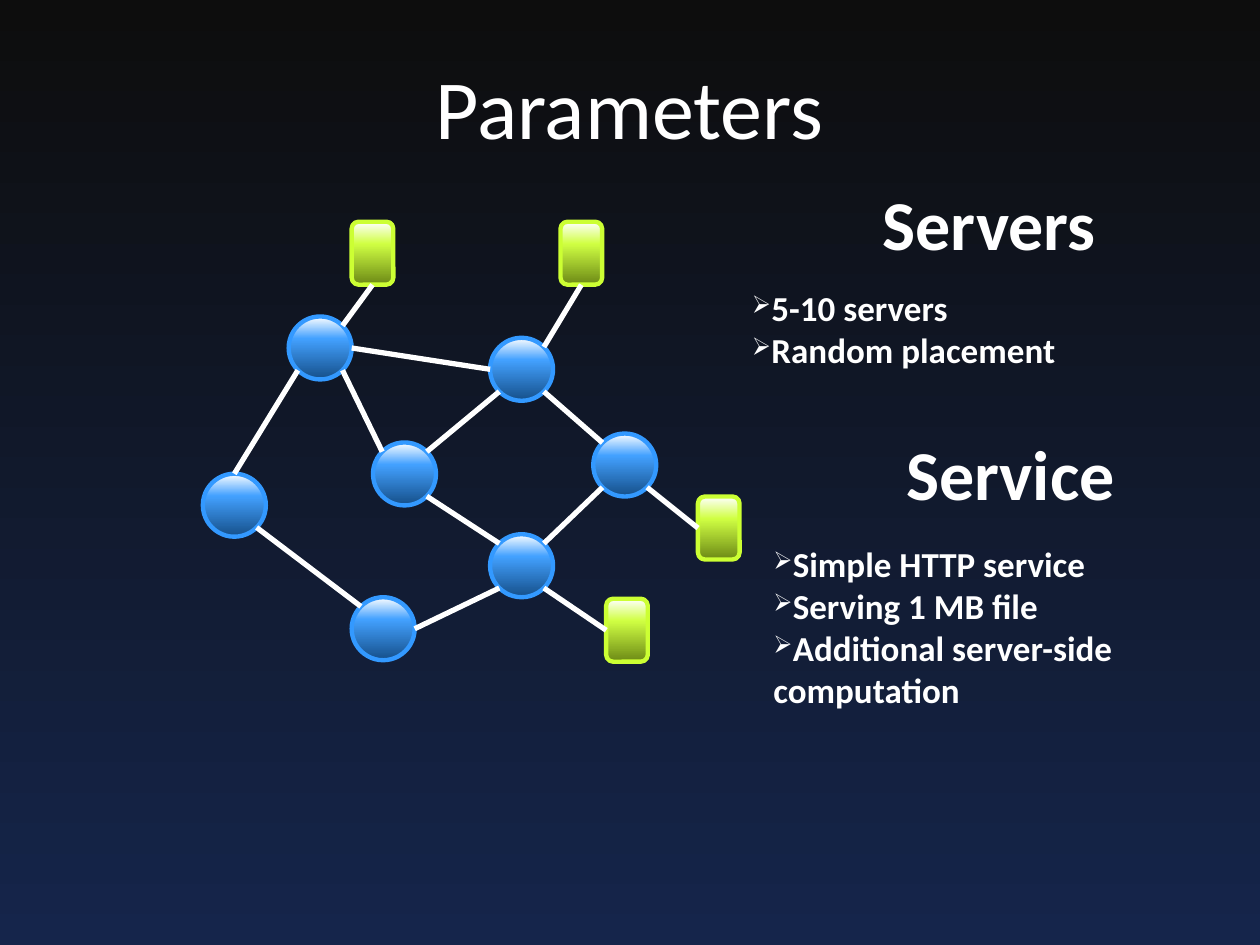
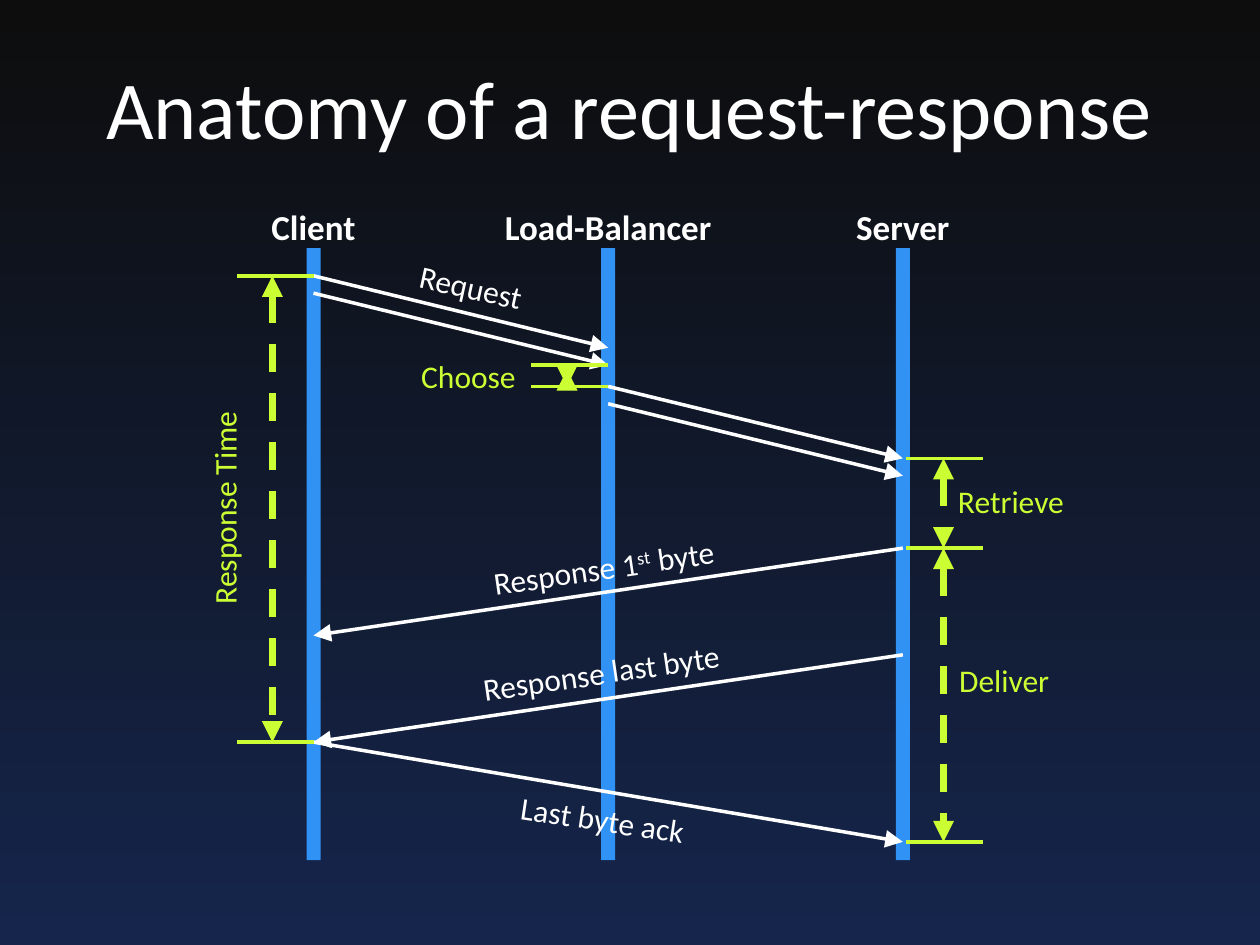
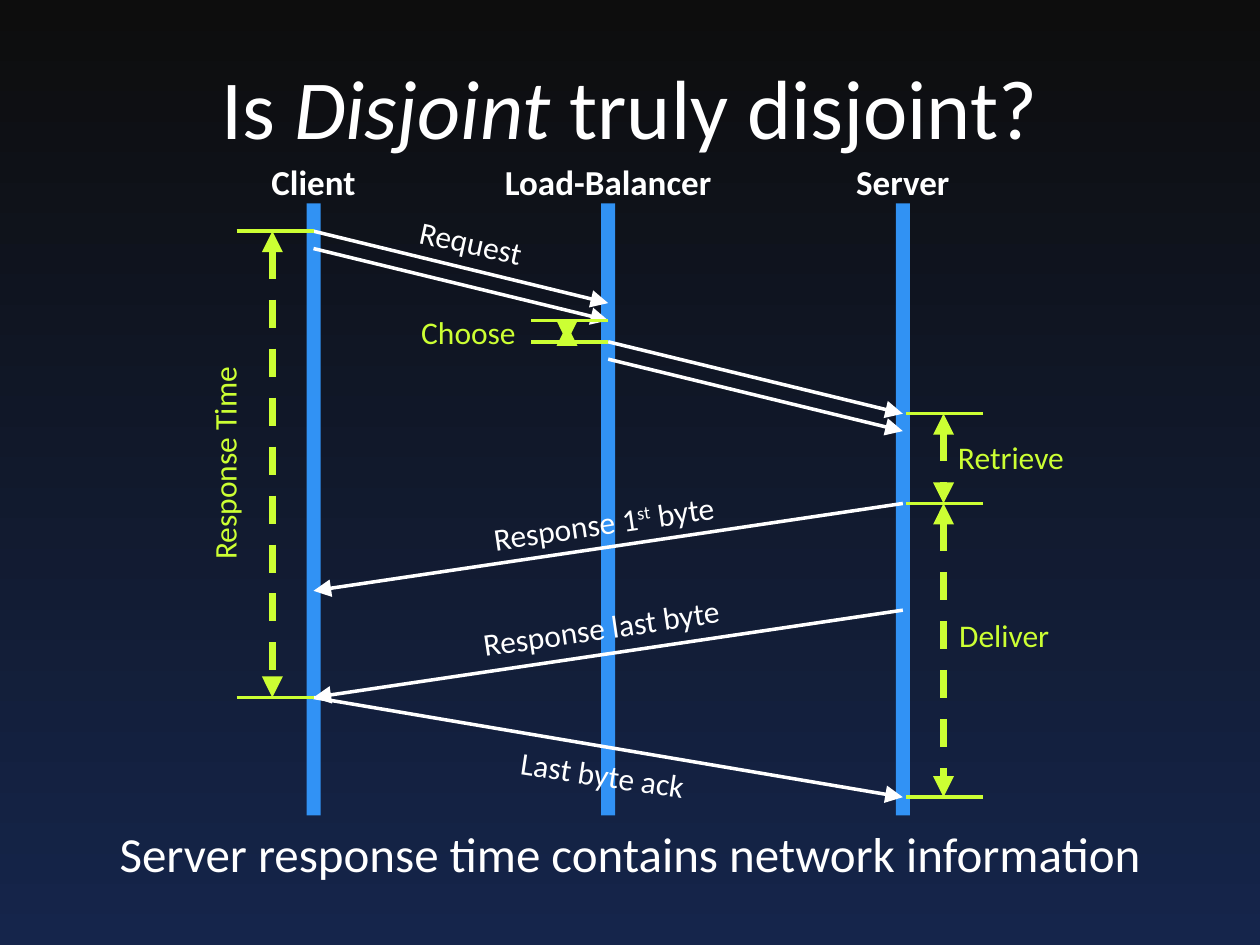
from dataclasses import dataclass
from math import cos, radians, sin
from typing import NamedTuple, Optional, Sequence, Union

from lxml.etree import SubElement
from pptx import Presentation
from pptx.dml.color import RGBColor
from pptx.enum.dml import MSO_LINE
from pptx.enum.shapes import MSO_CONNECTOR, MSO_SHAPE
from pptx.enum.text import MSO_ANCHOR, PP_ALIGN
from pptx.oxml.ns import qn
from pptx.shapes.autoshape import Shape
from pptx.shapes.connector import Connector
from pptx.slide import Slide
from pptx.util import Cm, Pt

FONT = "Calibri"
WHITE, LIME, BLUE = "FFFFFF", "CCFF33", "3399FF"
BACKGROUND_STOPS = ((0, "0D0D0D"), (100, "15254B"))
SERVER_STOPS = ((0, "6C8915"), (65, "D0FF43"), (100, WHITE))
ROUTER_STOPS = ((0, "154F89"), (65, "43A1FF"), (100, WHITE))


class Box(NamedTuple):
    """Place and size in centimetres."""
    left: float
    top: float
    width: float
    height: float


class Point(NamedTuple):
    x: float
    y: float


class Run(NamedTuple):
    text: str
    italic: bool = False
    superscript: bool = False


Text = Union[str, Sequence[Run]]


@dataclass(frozen=True)
class Label:
    text: Text
    box: Box
    color: str = WHITE
    align: PP_ALIGN = PP_ALIGN.LEFT
    rotation: float = 0
    vertical: bool = False


@dataclass(frozen=True)
class Panel:
    heading: str
    items: str
    left: float
    heading_top: float
    items_top: float
    items_height: float


@dataclass(frozen=True)
class ServerLink:
    """A server, the side its link leaves from, and the router it reaches."""
    left: float
    top: float
    side: int
    router: str
    angle: int


# ---------- shared drawing ----------

def rgb(color: str) -> RGBColor:
    return RGBColor.from_string(color)


def set_gradient(fill, element, stops: Sequence[tuple], angle: int) -> None:
    """Fill with (percent, colour) stops; the angle turns clockwise."""
    fill.gradient()
    stop_list = next(element.iter(qn("a:gsLst")))
    for stop in list(stop_list):
        stop_list.remove(stop)
    for percent, color in stops:
        stop = SubElement(stop_list, qn("a:gs"), pos=str(percent * 1000))
        SubElement(stop, qn("a:srgbClr"), val=color)
    next(element.iter(qn("a:lin"))).set("ang", str(angle * 60000))


def add_bullet(paragraph) -> None:
    properties = paragraph._p.get_or_add_pPr()
    properties.set("marL", "0")
    properties.set("indent", "0")
    SubElement(properties, qn("a:buSzPct"), val="70000")
    SubElement(properties, qn("a:buChar"), char="➢")


def add_text(slide: Slide, text: Text, box: Box, *, size: float, color: str = WHITE,
             bold: bool = False, align: PP_ALIGN = PP_ALIGN.CENTER, wrap: bool = True,
             anchor: MSO_ANCHOR = MSO_ANCHOR.TOP, bulleted: bool = False,
             rotation: float = 0, vertical: bool = False,
             margin: Optional[float] = None) -> Shape:
    """Add a text box; each line of a string becomes a paragraph."""
    shape = slide.shapes.add_textbox(*map(Cm, box))
    shape.rotation = rotation
    frame = shape.text_frame
    frame.word_wrap = wrap
    frame.vertical_anchor = anchor
    if margin is not None:
        frame.margin_top = frame.margin_bottom = Cm(margin)
    if vertical:
        frame._txBody.bodyPr.set("vert", "vert270")
    lines = [[Run(line)] for line in text.split("\n")] if isinstance(text, str) else [text]
    for index, line in enumerate(lines):
        paragraph = frame.add_paragraph() if index else frame.paragraphs[0]
        paragraph.alignment = align
        if bulleted:
            add_bullet(paragraph)
        for part in line:
            run = paragraph.add_run()
            run.text = part.text
            font = run.font
            font.name, font.size, font.bold = FONT, Pt(size), bold
            font.italic = part.italic
            font.color.rgb = rgb(color)
            if part.superscript:
                font._element.set("baseline", "30000")
    return shape


def add_title(slide: Slide, text: Text, size: float = 48) -> None:
    add_text(slide, text, Box(1.78, 1.12, 21.82, 2.03), size=size,
             anchor=MSO_ANCHOR.BOTTOM, margin=0)


def add_line(slide: Slide, start: Point, end: Point, *, color: str = WHITE,
             width: float = 2, dashed: bool = False, head: bool = False,
             tail: bool = False, arrow_size: str = "med", opacity: int = 100) -> Connector:
    """Draw a straight line; head and tail put arrowheads at start and end."""
    connector = slide.shapes.add_connector(MSO_CONNECTOR.STRAIGHT, *map(Cm, (*start, *end)))
    line = connector.line
    line.color.rgb = rgb(color)
    line.width = Pt(width)
    if dashed:
        line.dash_style = MSO_LINE.DASH
    properties = connector._element.spPr
    outline = properties.find(qn("a:ln"))
    if opacity < 100:
        SubElement(next(outline.iter(qn("a:srgbClr"))), qn("a:alpha"), val=str(opacity * 1000))
    for tag, shown in (("a:headEnd", head), ("a:tailEnd", tail)):
        if shown:
            SubElement(outline, qn(tag), type="triangle", w=arrow_size, len=arrow_size)
    SubElement(properties, qn("a:effectLst"))
    return connector


def add_node(slide: Slide, kind: MSO_SHAPE, box: Box, stops: Sequence[tuple],
             outline: str) -> Shape:
    shape = slide.shapes.add_shape(kind, *map(Cm, box))
    shape.shadow.inherit = False
    set_gradient(shape.fill, shape._element, stops, 270)
    shape.line.color.rgb = rgb(outline)
    shape.line.width = Pt(2.5)
    return shape


# ---------- network ----------

NODE_SIZE = 1.27
SERVER_WIDTH = 0.84
LEFT_SIDE, BOTTOM_SIDE = 1, 2
# Angles on a router's rim, clockwise from the right.
EAST, SOUTH_EAST, SOUTH_WEST, WEST = 0, 45, 135, 180
NORTH_WEST, NORTH, NORTH_EAST = 225, 270, 315

ROUTERS = {
    "upper left": Point(5.82, 6.38),
    "upper right": Point(9.88, 6.81),
    "centre": Point(7.52, 8.92),
    "far left": Point(4.09, 9.55),
    "bottom": Point(7.09, 12.04),
    "far right": Point(11.96, 8.74),
    "lower right": Point(9.88, 10.77),
}
ROUTER_LINKS = (
    ("upper left", EAST, "upper right", WEST),
    ("far right", NORTH_WEST, "upper right", SOUTH_EAST),
    ("far right", SOUTH_WEST, "lower right", NORTH_EAST),
    ("centre", SOUTH_EAST, "lower right", NORTH_WEST),
    ("upper left", SOUTH_WEST, "far left", NORTH),
    ("bottom", NORTH_WEST, "far left", SOUTH_EAST),
    ("lower right", SOUTH_WEST, "bottom", EAST),
    ("upper left", SOUTH_EAST, "centre", NORTH_WEST),
    ("centre", NORTH_EAST, "upper right", SOUTH_WEST),
)
SERVER_LINKS = (
    ServerLink(11.3, 4.47, BOTTOM_SIDE, "upper right", NORTH_EAST),
    ServerLink(7.09, 4.47, BOTTOM_SIDE, "upper left", NORTH_EAST),
    ServerLink(12.22, 12.07, LEFT_SIDE, "lower right", SOUTH_EAST),
    ServerLink(14.07, 10.01, LEFT_SIDE, "far right", SOUTH_EAST),
)
PANELS = (
    Panel("Servers", "5-10 servers\nRandom placement", 14.91, 3.51, 5.66, 1.96),
    Panel("Service", "Simple HTTP service\nServing 1 MB file\n"
          "Additional server-side computation", 15.34, 8.56, 10.82, 3.68),
)


def rim_point(router: str, angle: int) -> Point:
    corner, radius = ROUTERS[router], NODE_SIZE / 2
    return Point(corner.x + radius * (1 + cos(radians(angle))),
                 corner.y + radius * (1 + sin(radians(angle))))


def draw_network(slide: Slide) -> None:
    servers = [add_node(slide, MSO_SHAPE.ROUNDED_RECTANGLE,
                        Box(link.left, link.top, SERVER_WIDTH, NODE_SIZE), SERVER_STOPS, LIME)
               for link in SERVER_LINKS]
    for corner in ROUTERS.values():
        add_node(slide, MSO_SHAPE.OVAL, Box(*corner, NODE_SIZE, NODE_SIZE), ROUTER_STOPS, BLUE)
    for first, first_angle, second, second_angle in ROUTER_LINKS:
        add_line(slide, rim_point(first, first_angle), rim_point(second, second_angle), width=3)
    for server, link in zip(servers, SERVER_LINKS):
        connector = add_line(slide, Point(link.left, link.top),
                             rim_point(link.router, link.angle), width=3)
        connector.begin_connect(server, link.side)


def draw_panel(slide: Slide, panel: Panel) -> None:
    width = 10.06
    add_text(slide, panel.heading, Box(panel.left, panel.heading_top, width, 1.96),
             size=40, bold=True)
    add_text(slide, panel.items, Box(panel.left, panel.items_top, width, panel.items_height),
             size=20, bold=True, align=PP_ALIGN.LEFT, bulleted=True)


# ---------- request-response sequence ----------

CLIENT, BALANCER, SERVER = 6.32, 12.26, 18.2
LIFELINE_LENGTH = 12.34
TICK = 1.55
LABEL_HEIGHT = 1.02

# Moments, measured down from the top of the lifelines.
HOP, PACKET_GAP, RESPONSE_TRIP = 1.45, 0.35, 1.76
SENT = 0.56
RECEIVED = SENT + PACKET_GAP + HOP
CHOSEN = 2.79
FORWARDED = CHOSEN + HOP
FIRST_BYTE, LAST_BYTE = 6.05, 8.2
FINISHED = LAST_BYTE + RESPONSE_TRIP
ACKNOWLEDGED = 11.97

ACTORS = (("Client", CLIENT, 2.31), ("Load-Balancer", BALANCER, 4.98), ("Server", SERVER, 2.51))
MESSAGES = (
    (CLIENT, SENT, BALANCER, SENT + HOP),
    (SERVER, FIRST_BYTE, CLIENT, FIRST_BYTE + RESPONSE_TRIP),
    (SERVER, LAST_BYTE, CLIENT, FINISHED),
    (CLIENT, SENT + PACKET_GAP, BALANCER, RECEIVED),
    (BALANCER, CHOSEN, SERVER, FORWARDED),
    (BALANCER, CHOSEN + PACKET_GAP, SERVER, FORWARDED + PACKET_GAP),
    (CLIENT, FINISHED, SERVER, ACKNOWLEDGED),
)
SPANS = (
    (5.49, SENT, FINISHED),
    (19.02, FORWARDED, FIRST_BYTE),
    (19.02, FIRST_BYTE, ACKNOWLEDGED),
    (11.43, RECEIVED + 0.09, CHOSEN),
)
TICKS = (
    (CLIENT - TICK, (SENT, FINISHED)),
    (SERVER + 0.06, (FORWARDED, FIRST_BYTE, ACKNOWLEDGED)),
    (BALANCER - TICK, (RECEIVED, CHOSEN)),
)
LABELS = (
    Label("Response Time", Box(4.01, 3.12, 1.27, 4.24), LIME, PP_ALIGN.CENTER, vertical=True),
    Label("Deliver", Box(19.02, 8.2, 2.45, LABEL_HEIGHT), LIME, PP_ALIGN.CENTER),
    Label("Retrieve", Box(19.02, 4.6, 2.72, LABEL_HEIGHT), LIME, PP_ALIGN.CENTER),
    Label("Choose", Box(8.2, 2.08, 2.49, LABEL_HEIGHT), LIME, PP_ALIGN.CENTER),
    Label("Request", Box(8.2, 0.28, 2.67, LABEL_HEIGHT), rotation=12.4),
    Label((Run("Response 1"), Run("st", superscript=True), Run(" byte")),
          Box(9.68, 5.92, 5.11, LABEL_HEIGHT), rotation=351.7),
    Label("Response last byte", Box(9.47, 8.03, 5.46, LABEL_HEIGHT), rotation=351.7),
    Label("Last byte ack", Box(10.24, 11.02, 3.99, LABEL_HEIGHT), rotation=8.5),
)


def draw_sequence(slide: Slide, top: float) -> None:
    """Draw the whole diagram with its lifelines starting at top."""
    for _, x, _ in ACTORS:
        add_line(slide, Point(x, top), Point(x, top + LIFELINE_LENGTH),
                 color=BLUE, width=8, opacity=95)
    for start_x, start_y, end_x, end_y in MESSAGES:
        add_line(slide, Point(start_x, top + start_y), Point(end_x, top + end_y),
                 tail=True, arrow_size="lg")
    for x, start, end in SPANS:
        add_line(slide, Point(x, top + start), Point(x, top + end),
                 color=LIME, width=4, dashed=True, head=True, tail=True)
    for left, moments in TICKS:
        for moment in moments:
            add_line(slide, Point(left, top + moment), Point(left + TICK, top + moment),
                     color=LIME)
    for name, x, width in ACTORS:
        add_text(slide, name, Box(x - width / 2, top - 0.99, width, 1.12),
                 size=20, bold=True, wrap=False)
    for label in LABELS:
        add_text(slide, label.text, label.box._replace(top=top + label.box.top), size=18,
                 color=label.color, align=label.align, wrap=False,
                 rotation=label.rotation, vertical=label.vertical)


# ---------- slides ----------

def main() -> None:
    presentation = Presentation()
    presentation.slide_width, presentation.slide_height = Cm(25.4), Cm(19.05)
    master = presentation.slide_master
    set_gradient(master.background.fill, master._element, BACKGROUND_STOPS, 90)
    blank = presentation.slide_layouts[6]
    parameters, anatomy, disjoint = (presentation.slides.add_slide(blank) for _ in range(3))

    draw_network(parameters)
    add_title(parameters, "Parameters")
    for panel in PANELS:
        draw_panel(parameters, panel)

    add_title(anatomy, "Anatomy of a request-response", size=47)
    draw_sequence(anatomy, 5)

    add_title(disjoint, (Run("Is "), Run("Disjoint ", italic=True), Run("truly disjoint?")))
    draw_sequence(disjoint, 4.1)
    add_text(disjoint, "Server response time contains network information",
             Box(1.9, 16.48, 21.6, 1.45), size=28, wrap=False)

    presentation.save("out.pptx")


if __name__ == "__main__":
    main()
